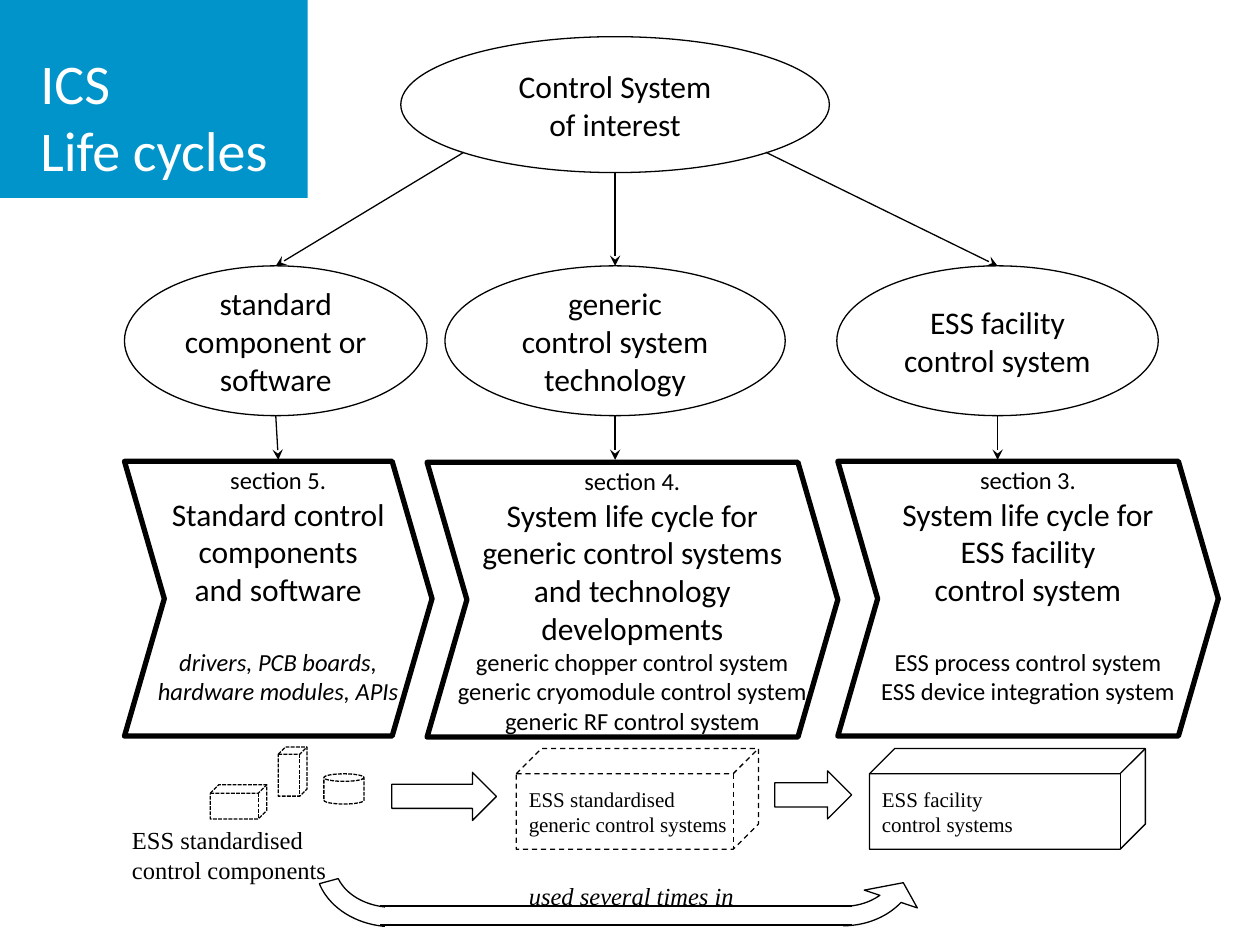
from dataclasses import dataclass

from lxml.etree import SubElement
from pptx import Presentation
from pptx.dml.color import RGBColor as RGB
from pptx.enum.dml import MSO_LINE as DASH
from pptx.enum.shapes import MSO_CONNECTOR, MSO_SHAPE as SHAPE
from pptx.enum.text import MSO_ANCHOR as ANCHOR, MSO_AUTO_SIZE as FIT, PP_ALIGN as ALIGN
from pptx.oxml.ns import qn
from pptx.util import Cm, Pt


@dataclass(frozen=True)
class Theme:
    blue: RGB = RGB(0x00, 0x94, 0xCA)
    white: RGB = RGB(0xFF, 0xFF, 0xFF)
    black: RGB = RGB(0x00, 0x00, 0x00)
    sans: str = "Calibri"
    serif: str = "Times New Roman"
    title: int = 32
    large: int = 18
    small: int = 14
    tiny: int = 12
    thin: float = 0.75
    thick: float = 3


THEME = Theme()
HEAD = dict(name=THEME.sans, size=Pt(THEME.large))
NOTE = dict(name=THEME.sans, size=Pt(THEME.small))
NOTE_ITALIC = dict(NOTE, italic=True)
LABEL = dict(name=THEME.serif, size=Pt(THEME.small))
LABEL_ITALIC = dict(LABEL, italic=True)
TAG = dict(name=THEME.serif, size=Pt(THEME.tiny))


def set_all(obj, values):
    for name, value in values.items():
        setattr(obj, name, value)


class Deck:
    def __init__(self, theme):
        self.theme = theme
        self.prs = Presentation()
        set_all(self.prs, dict(slide_width=Cm(25.4), slide_height=Cm(19.05)))
        self.s = self.prs.slides.add_slide(self.prs.slide_layouts[5])

    def fill_frame(self, tf, lines, align, color=None):
        """Fill a frame from (text, font values, space before) lines."""
        for i, (text, font, gap) in enumerate(lines):
            p = tf.paragraphs[0] if i == 0 else tf.add_paragraph()
            p.alignment = align
            if gap:
                p.space_before = Pt(gap)
            p.text = text
            for r in p.runs:
                set_all(r.font, font)
                r.font.color.rgb = color or self.theme.black

    def title(self, text, box):
        sp = self.s.shapes.title
        set_all(sp, dict(zip(("left", "top", "width", "height"), map(Cm, box))))
        tf = sp.text_frame
        set_all(tf, dict(auto_size=FIT.NONE, vertical_anchor=ANCHOR.MIDDLE, word_wrap=True))
        font = dict(name=self.theme.sans, size=Pt(self.theme.title))
        self.fill_frame(tf, [(text, font, 0)], ALIGN.LEFT, self.theme.white)

    def shape(self, kind, box, fill=None, line=THEME.black, width=THEME.thin,
              dash=None, adj=(), flip=False, rotation=0):
        sp = self.s.shapes.add_shape(kind, *map(Cm, box))
        sp.shadow.inherit = False
        for i, value in enumerate(adj):
            sp.adjustments[i] = value
        if fill is None:
            sp.fill.background()
        else:
            sp.fill.solid()
            sp.fill.fore_color.rgb = fill
        if line is None:
            sp.line.fill.background()
        else:
            sp.line.color.rgb = line
            sp.line.width = Pt(width)
        if dash:
            sp.line.dash_style = dash
        sp.rotation = rotation
        if flip:
            sp._element.spPr.find(qn("a:xfrm")).set("flipH", "1")
        return sp

    def shape_text(self, sp, lines, align=ALIGN.CENTER, **frame):
        set_all(sp.text_frame, dict(dict(vertical_anchor=ANCHOR.MIDDLE, word_wrap=True), **frame))
        self.fill_frame(sp.text_frame, lines, align)

    def text(self, lines, box):
        tf = self.s.shapes.add_textbox(*map(Cm, box)).text_frame
        set_all(tf, dict(word_wrap=True, auto_size=FIT.SHAPE_TO_FIT_TEXT))
        self.fill_frame(tf, lines, ALIGN.LEFT)

    def line(self, start, end, width=THEME.thin, arrow=True):
        c = self.s.shapes.add_connector(MSO_CONNECTOR.STRAIGHT, *map(Cm, start + end))
        c.line.color.rgb = self.theme.black
        c.line.width = Pt(width)
        if arrow:
            SubElement(c.line._get_or_add_ln(), qn("a:tailEnd"), type="stealth")
        SubElement(c._element.spPr, qn("a:effectLst"))


def plain(font, *texts):
    return [(text, font, 0) for text in texts]


def main():
    deck = Deck(THEME)

    # Title corner
    deck.shape(SHAPE.RECTANGLE, (0, 0, 25.4, 3.99), THEME.blue, None)
    deck.shape(SHAPE.RECTANGLE, (6.2, 0, 19.2, 4.32), THEME.white, None)
    deck.title("ICS\vLife cycles", (0.56, 0.74, 5.13, 3.18))
    # Bring the title in front of the coloured corner
    title = deck.s.shapes.title._element
    title.getparent().append(title)

    # System of interest
    root = deck.shape(SHAPE.OVAL, (8.08, 0.74, 8.64, 2.74))
    deck.shape_text(root, plain(HEAD, "Control System", "of interest"))

    # Kinds of system: left, width, text, arrow start, arrow end on the chevron
    top, height, chevron_top = 5.36, 3.02, 9.27
    kinds = [
        (16.87, 6.48, ("ESS facility", "control system"), (15.44, 3.07), 20.11),
        (2.51, 6.1, ("standard", "component or software"), (9.35, 3.07), 5.61),
        (8.97, 6.86, ("generic", "control system technology"), (12.4, 3.48), 12.4),
    ]
    for left, width, texts, start, end_x in kinds:
        middle = left + width / 2
        sp = deck.shape(SHAPE.OVAL, (left, top, width, height))
        deck.shape_text(sp, plain(HEAD, *texts))
        deck.line(start, (middle, top))
        deck.line((middle, top + height), (end_x, chevron_top))

    # Curved "used several times" arrow: two bends joined by a straight band
    bend = (0.119, 11.423, 193.483, 117.153, 0.172)
    for box in ((5.99, 15.77, 3.86, 3.28), (15.14, 15.75, 3.73, 3.28)):
        deck.shape(SHAPE.CIRCULAR_ARROW, box, THEME.white, adj=bend, flip=True, rotation=180)
    deck.shape(SHAPE.RECTANGLE, (7.77, 17.63, 9.22, 1.4), THEME.white, THEME.white)
    for y in (18.26, 18.64):
        deck.line((7.67, y), (17.17, y), width=1, arrow=False)
    deck.text(plain(LABEL_ITALIC, "used several times in"), (10.41, 17.63, 5.21, 0.86))

    # Life cycle chevrons: left, top, width, section, heading, notes, note font, gap
    chevrons = [
        (16.89, 9.3, 7.67, "section 3.",
         ("System life cycle for", "ESS facility", "control system"),
         ("ESS process control system", "ESS device integration system"), NOTE, 22),
        (8.61, 9.32, 8.28, "section 4.",
         ("System life cycle for", "generic control systems", "and technology", "developments"),
         ("generic chopper control system", "generic cryomodule control system",
          "generic RF control system"), NOTE, 0),
        (2.51, 9.3, 6.2, "section 5.",
         ("Standard control", "components", "and software"),
         ("drivers, PCB boards,", "hardware modules, APIs"), NOTE_ITALIC, 22),
    ]
    for left, y, width, section, heading, notes, font, gap in chevrons:
        sp = deck.shape(SHAPE.CHEVRON, (left, y, width, 5.54), width=THEME.thick, adj=(0.145,))
        lines = plain(NOTE, section) + plain(HEAD, *heading)
        lines += [(notes[0], font, gap)] + plain(font, *notes[1:])
        deck.shape_text(sp, lines, vertical_anchor=ANCHOR.TOP, word_wrap=False,
                        margin_top=Cm(0.08), margin_bottom=0)

    # Standardised components
    for kind, box in ((SHAPE.CUBE, (5.61, 15.06, 0.58, 0.99)),
                      (SHAPE.CUBE, (4.24, 15.82, 1.14, 0.69)),
                      (SHAPE.CAN, (6.53, 15.6, 0.81, 0.61))):
        deck.shape(kind, box, dash=DASH.SQUARE_DOT)
    deck.text(plain(LABEL, "ESS standardised", "control components"), (2.41, 16.51, 4.8, 1.45))

    # System boxes
    for left, width, dash, texts in (
            (10.41, 4.88, DASH.DASH, ("ESS standardised", "generic control systems")),
            (17.53, 5.56, None, ("ESS facility", "control systems"))):
        sp = deck.shape(SHAPE.CUBE, (left, 15.09, width, 2.03), dash=dash)
        deck.shape_text(sp, plain(TAG, *texts), ALIGN.LEFT, word_wrap=False)

    # Block arrows between the stages
    for box in ((15.62, 15.54, 1.55, 0.97), (7.9, 15.57, 2.11, 0.97)):
        deck.shape(SHAPE.LEFT_ARROW, box, flip=True)

    deck.prs.save("out.pptx")


if __name__ == "__main__":
    main()
